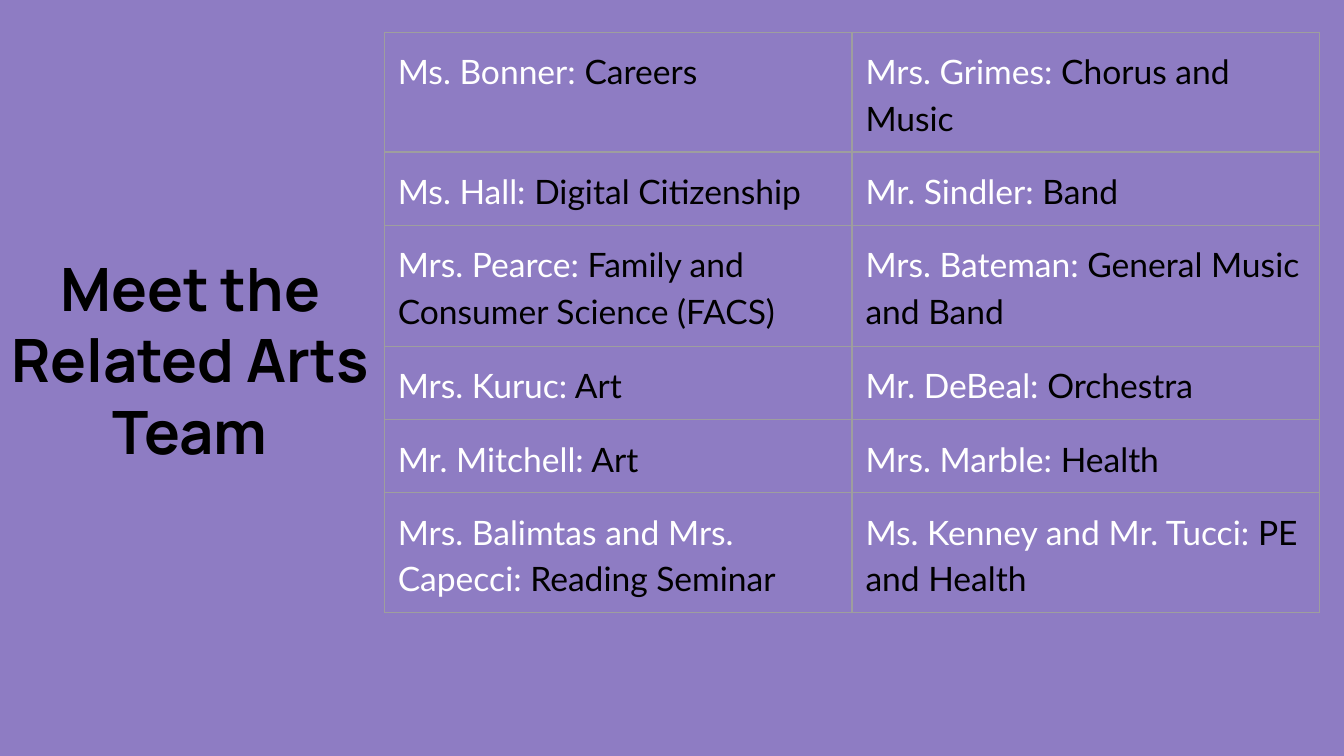
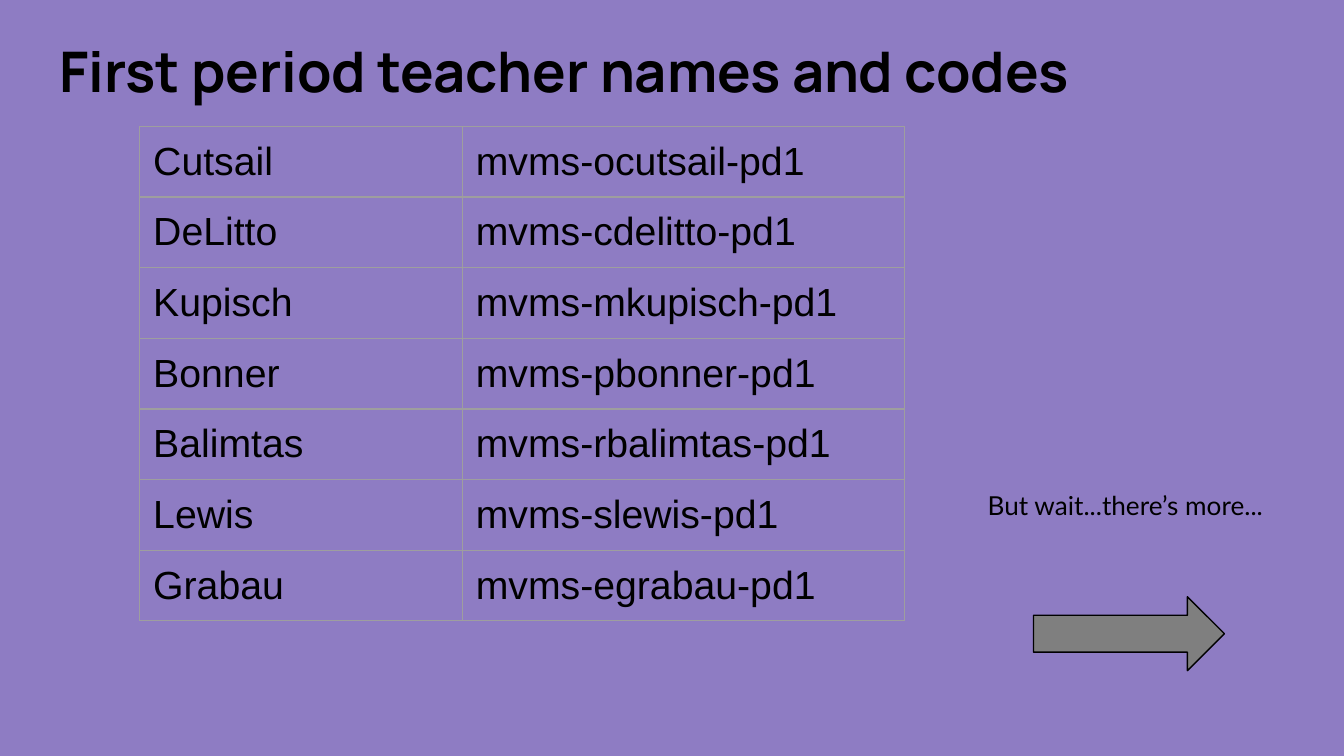
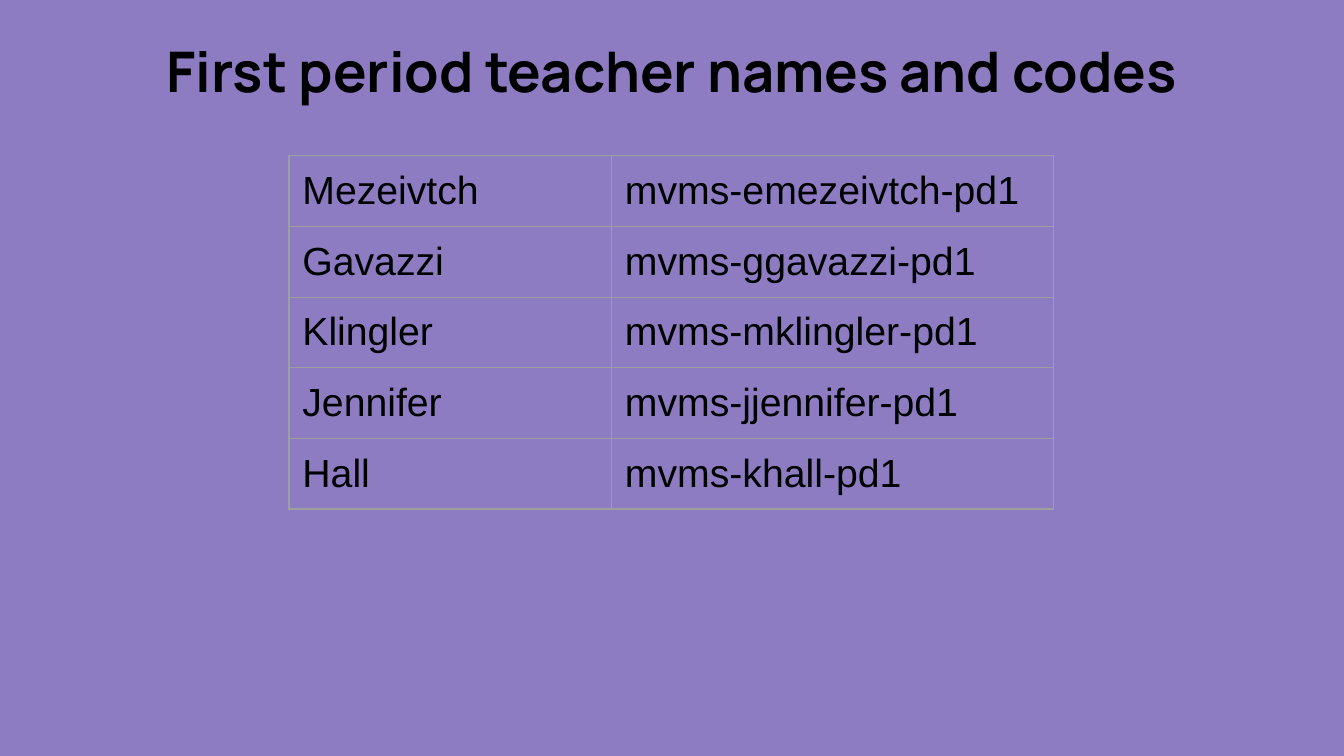
from lxml.etree import SubElement
from pptx import Presentation
from pptx.dml.color import RGBColor
from pptx.enum.shapes import MSO_SHAPE
from pptx.enum.text import MSO_ANCHOR, MSO_AUTO_SIZE, PP_ALIGN
from pptx.oxml.ns import qn
from pptx.util import Inches, Pt

COLORS = {"page": "8E7CC3", "ink": "000000", "name": "FFFFFF",
          "grid": "9E9E9E", "arrow": "7F7F7F"}
HEAD, BODY, CODE = "Manrope", "Lato", "Arial"
ROW = 0.42
PAD = 0.1

TEAM_TITLE = "Meet the Related Arts Team"
TEAM = [
    [("Ms. Bonner:", "Careers"), ("Mrs. Grimes:", "Chorus and Music")],
    [("Ms. Hall:", "Digital Citizenship"), ("Mr. Sindler:", "Band")],
    [("Mrs. Pearce:", "Family and Consumer Science (FACS)"),
     ("Mrs. Bateman:", "General Music and Band")],
    [("Mrs. Kuruc:", "Art"), ("Mr. DeBeal:", "Orchestra")],
    [("Mr. Mitchell:", "Art"), ("Mrs. Marble:", "Health")],
    [("Mrs. Balimtas and Mrs. Capecci:", "Reading Seminar"),
     ("Ms. Kenney and Mr. Tucci:", "PE and Health")],
]
TEAM_ROWS = [ROW, ROW, 0.9, ROW, ROW, ROW]

CODE_TITLE = "First period teacher names and codes"
CODE_BOX = (0.34, 0.17, 9.32, 0.68)
CODE_COLS = [2.4, 3.29]
# First initial and last name; the class code is made from both
FIRST = [("o", "Cutsail"), ("c", "DeLitto"), ("m", "Kupisch"), ("p", "Bonner"),
         ("r", "Balimtas"), ("s", "Lewis"), ("e", "Grabau")]
MORE = [("e", "Mezeivtch"), ("g", "Gavazzi"), ("m", "Klingler"),
        ("j", "Jennifer"), ("k", "Hall")]
HINT = "But wait...there’s more..."


def rgb(key):
    return RGBColor.from_string(COLORS[key])


def style(run, font, size, color="ink", bold=False):
    run.font.name = font
    run.font.size = Pt(size)
    run.font.color.rgb = rgb(color)
    run.font.bold = bold


def set_frame(frame):
    """Give a text frame equal insets, wrapping and top anchoring."""
    frame.word_wrap = True
    frame.auto_size = MSO_AUTO_SIZE.NONE
    frame.vertical_anchor = MSO_ANCHOR.TOP
    frame.margin_left = frame.margin_right = Inches(PAD)
    frame.margin_top = frame.margin_bottom = Inches(PAD)


def new_slide(deck, text, box, size, align):
    slide = deck.slides.add_slide(deck.slide_layouts[5])
    title = slide.shapes.title
    title.left, title.top, title.width, title.height = map(Inches, box)
    frame = title.text_frame
    set_frame(frame)
    frame.text = text
    para = frame.paragraphs[0]
    para.alignment = align
    style(para.runs[0], HEAD, size, bold=True)
    return slide


def add_edges(cell):
    props = cell._tc.get_or_add_tcPr()
    for side in ("lnL", "lnR", "lnT", "lnB"):
        line = SubElement(props, qn(f"a:{side}"), w=str(Pt(0.75)))
        fill = SubElement(line, qn("a:solidFill"))
        SubElement(fill, qn("a:srgbClr"), val=COLORS["grid"])


def add_grid(slide, left, top, cols, rows):
    """Add a bordered, unfilled table with the given column and row sizes."""
    table = slide.shapes.add_table(
        len(rows), len(cols), Inches(left), Inches(top),
        Inches(sum(cols)), Inches(sum(rows))).table
    table.first_row = table.horz_banding = False
    for col, width in zip(table.columns, cols):
        col.width = Inches(width)
    for row, height in zip(table.rows, rows):
        row.height = Inches(height)
    for cell in table.iter_cells():
        cell.margin_left = cell.margin_right = Inches(PAD)
        cell.margin_top = cell.margin_bottom = Inches(PAD)
        add_edges(cell)
        cell.fill.background()
    return table


def add_team(slide):
    table = add_grid(slide, 2.86, 0.24, [3.48, 3.48], TEAM_ROWS)
    pairs = [pair for row in TEAM for pair in row]
    for cell, (name, role) in zip(table.iter_cells(), pairs):
        para = cell.text_frame.paragraphs[0]
        para.line_spacing = 1.15
        para.space_after = Pt(16)
        for text, color in ((name, "name"), (f" {role}", "ink")):
            run = para.add_run()
            run.text = text
            style(run, BODY, 18, color)


def add_codes(slide, left, top, staff):
    table = add_grid(slide, left, top, CODE_COLS, [ROW] * len(staff))
    texts = [text for first, last in staff
             for text in (last, f"mvms-{first}{last.lower()}-pd1")]
    for cell, text in zip(table.iter_cells(), texts):
        cell.text_frame.text = text
        style(cell.text_frame.paragraphs[0].runs[0], CODE, 21)


def add_hint(slide):
    box = slide.shapes.add_textbox(Inches(7.25), Inches(3.54),
                                   Inches(2.41), Inches(1.6))
    set_frame(box.text_frame)
    box.text_frame.text = HINT
    style(box.text_frame.paragraphs[0].runs[0], BODY, 14)
    arrow = slide.shapes.add_shape(MSO_SHAPE.RIGHT_ARROW, Inches(7.69),
                                   Inches(4.44), Inches(1.42), Inches(0.55))
    arrow.shadow.inherit = False
    arrow.fill.solid()
    arrow.fill.fore_color.rgb = rgb("arrow")
    arrow.line.color.rgb = rgb("ink")
    arrow.line.width = Pt(0.75)


def main():
    deck = Presentation()
    deck.slide_width = Inches(10)
    deck.slide_height = deck.slide_width * 9 // 16
    back = deck.slide_master.background.fill
    back.solid()
    back.fore_color.rgb = rgb("page")

    team = new_slide(deck, TEAM_TITLE, (-0.36, 1.77, 3.55, 1.54), 32,
                     PP_ALIGN.CENTER)
    add_team(team)

    first = new_slide(deck, CODE_TITLE, CODE_BOX, 30, PP_ALIGN.LEFT)
    add_codes(first, 1.04, 0.94, FIRST)
    add_hint(first)

    more = new_slide(deck, CODE_TITLE, CODE_BOX, 30, PP_ALIGN.CENTER)
    add_codes(more, 2.15, 1.16, MORE)

    deck.save("out.pptx")


if __name__ == "__main__":
    main()
